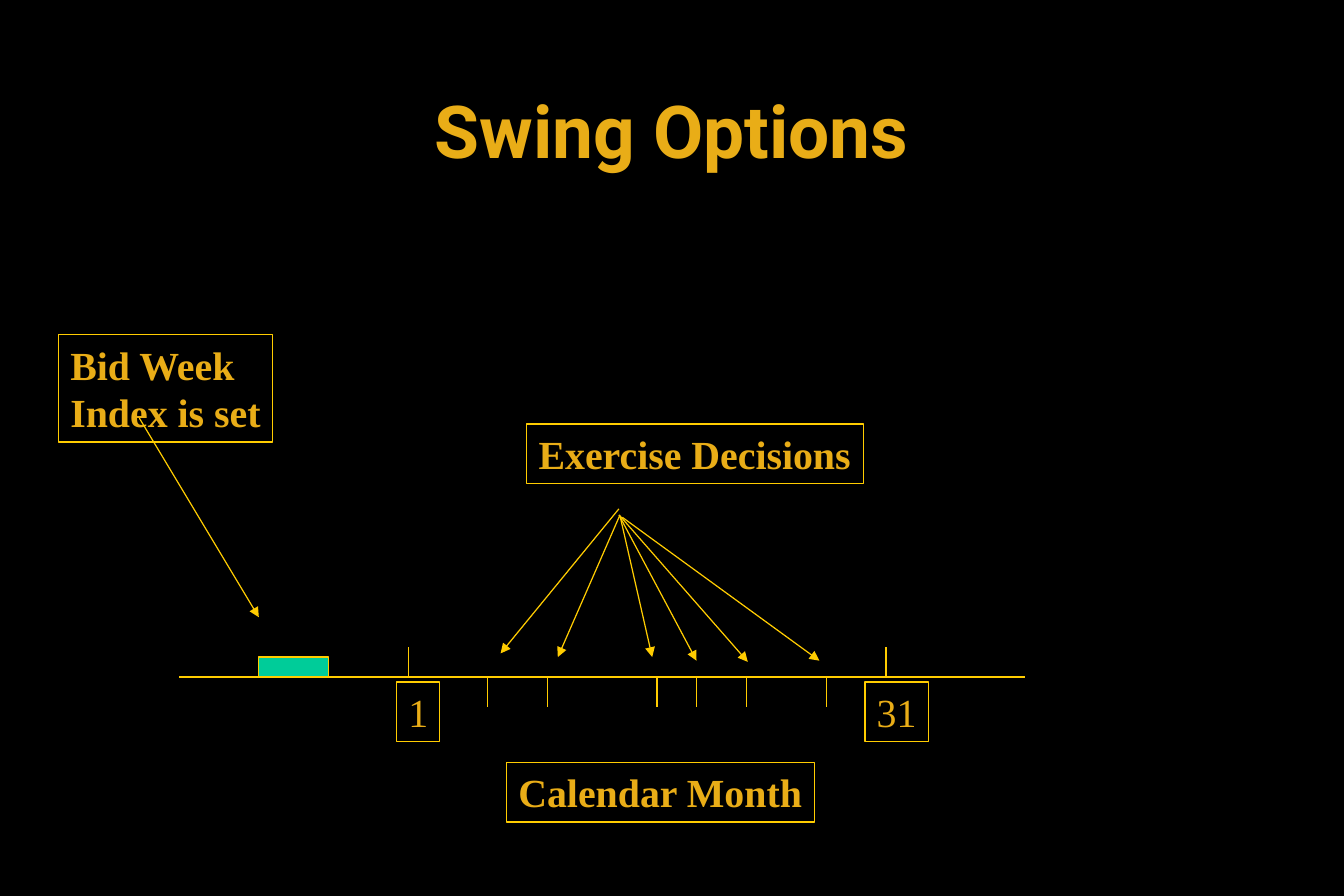
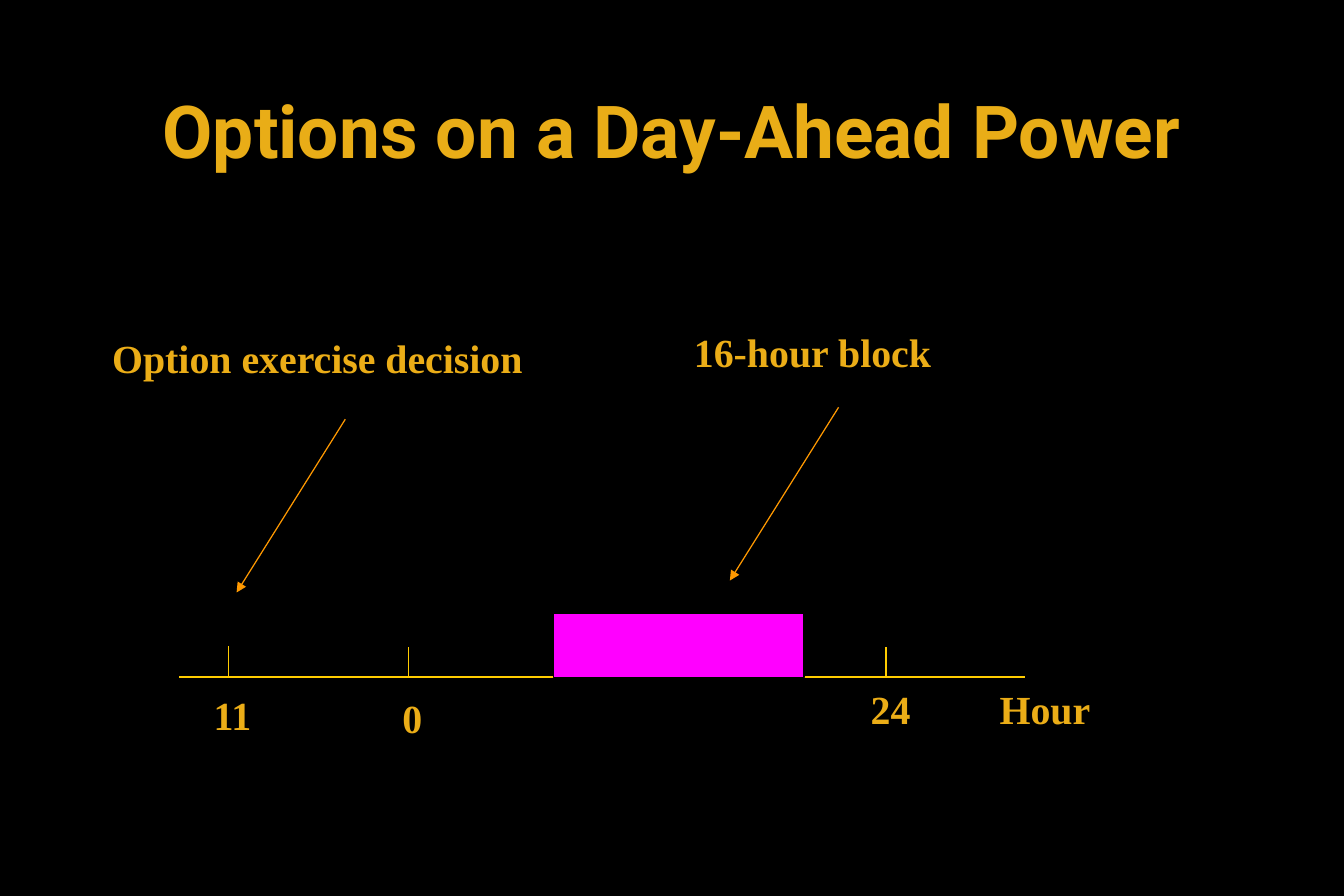
from dataclasses import dataclass

import lxml.etree
import pptx
import pptx.dml.color
import pptx.enum.shapes
import pptx.enum.text
import pptx.oxml.ns
import pptx.util
from pptx.shapes.base import BaseShape
from pptx.slide import Slide

# Shared style
BLACK = "000000"
GOLD = "E9AD17"
LABEL_GOLD = "EBAD17"
YELLOW = "FFCC00"
ORANGE = "FF9900"
GREEN = "00CC99"
MAGENTA = "FF00FF"
TITLE_FONT = "Roboto"
BODY_FONT = "Times New Roman"
LINE_WIDTH = 0.75

# Shared time axis, in points
AXIS_LEFT, AXIS_RIGHT, AXIS_Y = 108, 618, 408
TICK = 18
PERIOD_START, PERIOD_END = 246, 534


@dataclass(frozen=True)
class Label:
    text: str
    left: float
    top: float
    width: float
    height: float = 36
    bold: bool = True
    framed: bool = False
    wrap: bool = False
    color: str = LABEL_GOLD
    font: str = BODY_FONT
    size: float = 24
    centered: bool = False


@dataclass(frozen=True)
class Line:
    x1: float
    y1: float
    x2: float
    y2: float
    color: str = YELLOW
    arrow: bool = False


@dataclass(frozen=True)
class Block:
    left: float
    top: float
    width: float
    height: float
    fill: str
    outline: str


def rgb(color: str) -> pptx.dml.color.RGBColor:
    return pptx.dml.color.RGBColor.from_string(color)


def points(*lengths: float) -> list[pptx.util.Length]:
    return [pptx.util.Pt(length) for length in lengths]


def set_line(shape: BaseShape, color: str) -> None:
    shape.line.color.rgb = rgb(color)
    shape.line.width = pptx.util.Pt(LINE_WIDTH)


def add_rectangle(slide: Slide, left: float, top: float, width: float,
                  height: float, outline: str) -> BaseShape:
    shape = slide.shapes.add_shape(pptx.enum.shapes.MSO_SHAPE.RECTANGLE,
                                   *points(left, top, width, height))
    shape.shadow.inherit = False
    set_line(shape, outline)
    return shape


def draw_block(slide: Slide, block: Block) -> None:
    shape = add_rectangle(slide, block.left, block.top, block.width,
                          block.height, block.outline)
    shape.fill.solid()
    shape.fill.fore_color.rgb = rgb(block.fill)


def draw_label(slide: Slide, label: Label) -> None:
    box = (label.left, label.top, label.width, label.height)
    if label.framed:
        shape = add_rectangle(slide, *box, YELLOW)
        shape.fill.background()
    else:
        shape = slide.shapes.add_textbox(*points(*box))
    text_frame = shape.text_frame
    text_frame.text = label.text
    text_frame.word_wrap = label.wrap
    text_frame.vertical_anchor = pptx.enum.text.MSO_ANCHOR.TOP
    if not label.centered:
        text_frame.auto_size = pptx.enum.text.MSO_AUTO_SIZE.SHAPE_TO_FIT_TEXT
    alignment = pptx.enum.text.PP_ALIGN
    for paragraph in text_frame.paragraphs:
        paragraph.alignment = alignment.CENTER if label.centered else alignment.LEFT
        for run in paragraph.runs:
            run.font.name = label.font
            run.font.size = pptx.util.Pt(label.size)
            run.font.bold = label.bold
            run.font.color.rgb = rgb(label.color)


def draw_line(slide: Slide, line: Line) -> None:
    connector = slide.shapes.add_connector(
        pptx.enum.shapes.MSO_CONNECTOR.STRAIGHT,
        *points(line.x1, line.y1, line.x2, line.y2))
    set_line(connector, line.color)
    qn = pptx.oxml.ns.qn
    if line.arrow:
        outline = connector.line._get_or_add_ln()
        lxml.etree.SubElement(outline, qn("a:tailEnd"), type="triangle")
    lxml.etree.SubElement(connector._element.spPr, qn("a:effectLst"))


def draw_tick(slide: Slide, x: float, end: float, start: float = AXIS_Y) -> None:
    draw_line(slide, Line(x, start, x, end))


def add_timeline_slide(presentation: pptx.presentation.Presentation,
                       title: str) -> Slide:
    """Add a slide with the title, the axis and the ticks of its period."""
    slide = presentation.slides.add_slide(presentation.slide_layouts[6])
    draw_label(slide, Label(title, 60, 48, 690, 90, wrap=True, color=GOLD,
                            font=TITLE_FONT, size=44, centered=True))
    draw_line(slide, Line(AXIS_LEFT, AXIS_Y, AXIS_RIGHT, AXIS_Y))
    for x in (PERIOD_START, PERIOD_END):
        draw_tick(slide, x, AXIS_Y - TICK)
    return slide


def build_swing_options(presentation: pptx.presentation.Presentation) -> None:
    slide = add_timeline_slide(presentation, "Swing Options")
    draw_block(slide, Block(156, 396, 42, 12, GREEN, YELLOW))

    # Framed labels
    for text, left, top, width, height, bold in (
        ("Bid Week\nIndex is set", 35.3, 201.6, 128.9, 64.8, True),
        ("1", 239, 411.1, 25.9, 36, False),
        ("31", 521.3, 411.1, 38.2, 36, False),
        ("Calendar Month", 305.3, 459.4, 185.8, 36, True),
        ("Exercise Decisions", 317.5, 255.6, 203, 36, True),
    ):
        draw_label(slide, Label(text, left, top, width, height, bold,
                                framed=True, color=GOLD))

    # Decision days below the axis
    for x in (294, 330, 396, 420, 450, 498):
        draw_tick(slide, x, AXIS_Y + TICK)

    # Arrows to the bid week and to each decision
    for ends in (
        (84, 252, 156, 372),
        (373, 306.7, 301.7, 393.8),
        (373.7, 310.3, 336.2, 396),
        (373.7, 311, 393.1, 396),
        (373, 310.3, 419.8, 398.2),
        (373.7, 311, 450.7, 398.9),
        (375.1, 311.8, 493.9, 398.2),
    ):
        draw_line(slide, Line(*ends, arrow=True))


def build_day_ahead(presentation: pptx.presentation.Presentation) -> None:
    slide = add_timeline_slide(presentation, "Options on a Day-Ahead Power")
    draw_tick(slide, 137.5, 389.5, 407.5)
    draw_block(slide, Block(333.4, 369.4, 151.2, 38.9, MAGENTA, BLACK))

    # Hours and captions
    for label in (
        Label("11", 121.7, 412.6, 38.2),
        Label("0", 235.4, 414.7, 25.9),
        Label("24", 517.7, 409, 38.2),
        Label("Hour", 595.4, 409, 69),
        Label("16-hour block", 411.1, 193.7, 229.7, wrap=True),
        Label("Option exercise decision", 60.5, 197.3, 265, wrap=True),
    ):
        draw_label(slide, label)

    # Parallel arrows from the captions
    for x, y in ((505.4, 245.5), (208.1, 252.7)):
        draw_line(slide, Line(x, y, x - 65.5, y + 104.4, ORANGE, arrow=True))


def main() -> None:
    presentation = pptx.Presentation()
    presentation.slide_width, presentation.slide_height = points(810, 540)
    background = presentation.slide_master.background.fill
    background.solid()
    background.fore_color.rgb = rgb(BLACK)
    build_swing_options(presentation)
    build_day_ahead(presentation)
    presentation.save("out.pptx")


if __name__ == "__main__":
    main()
